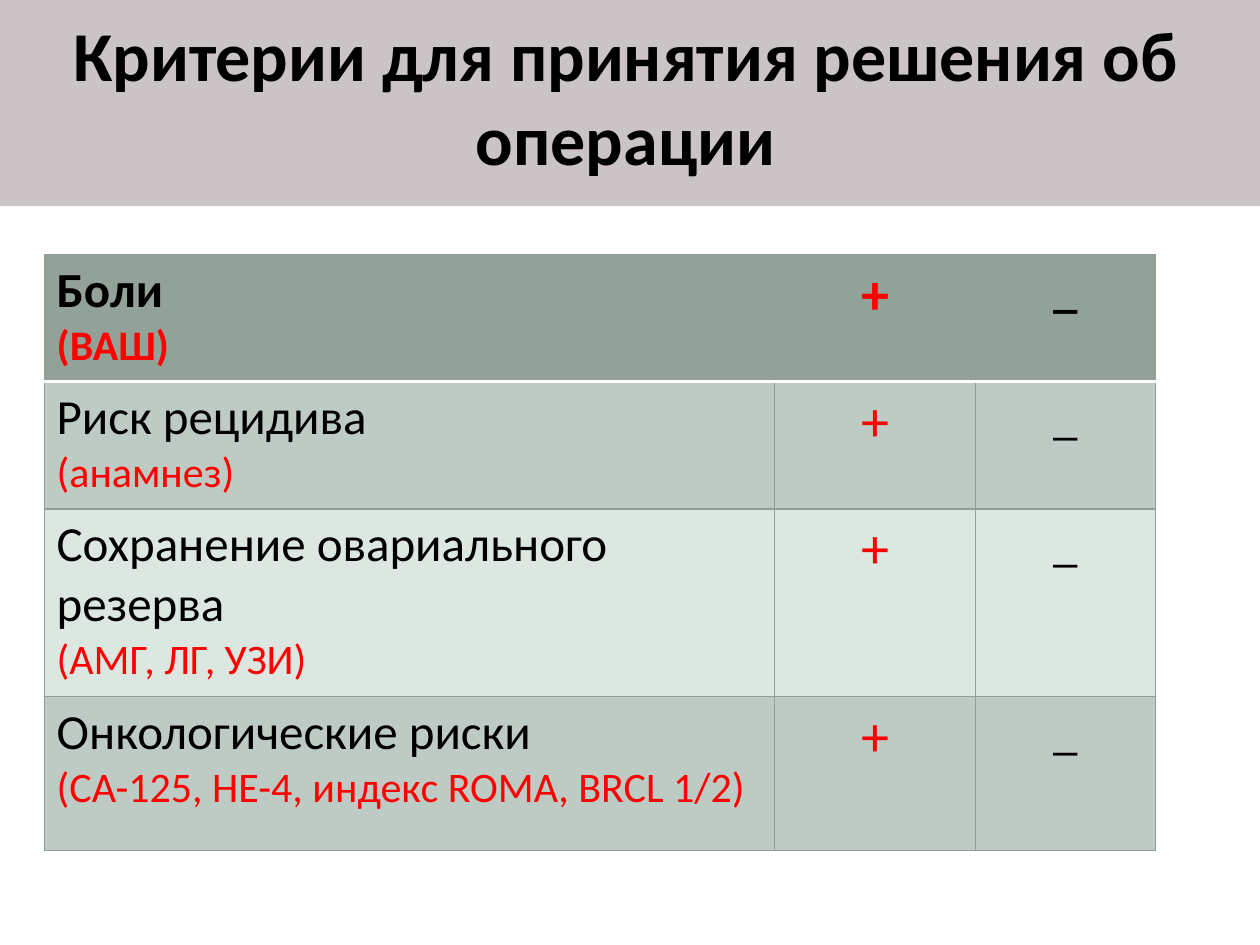
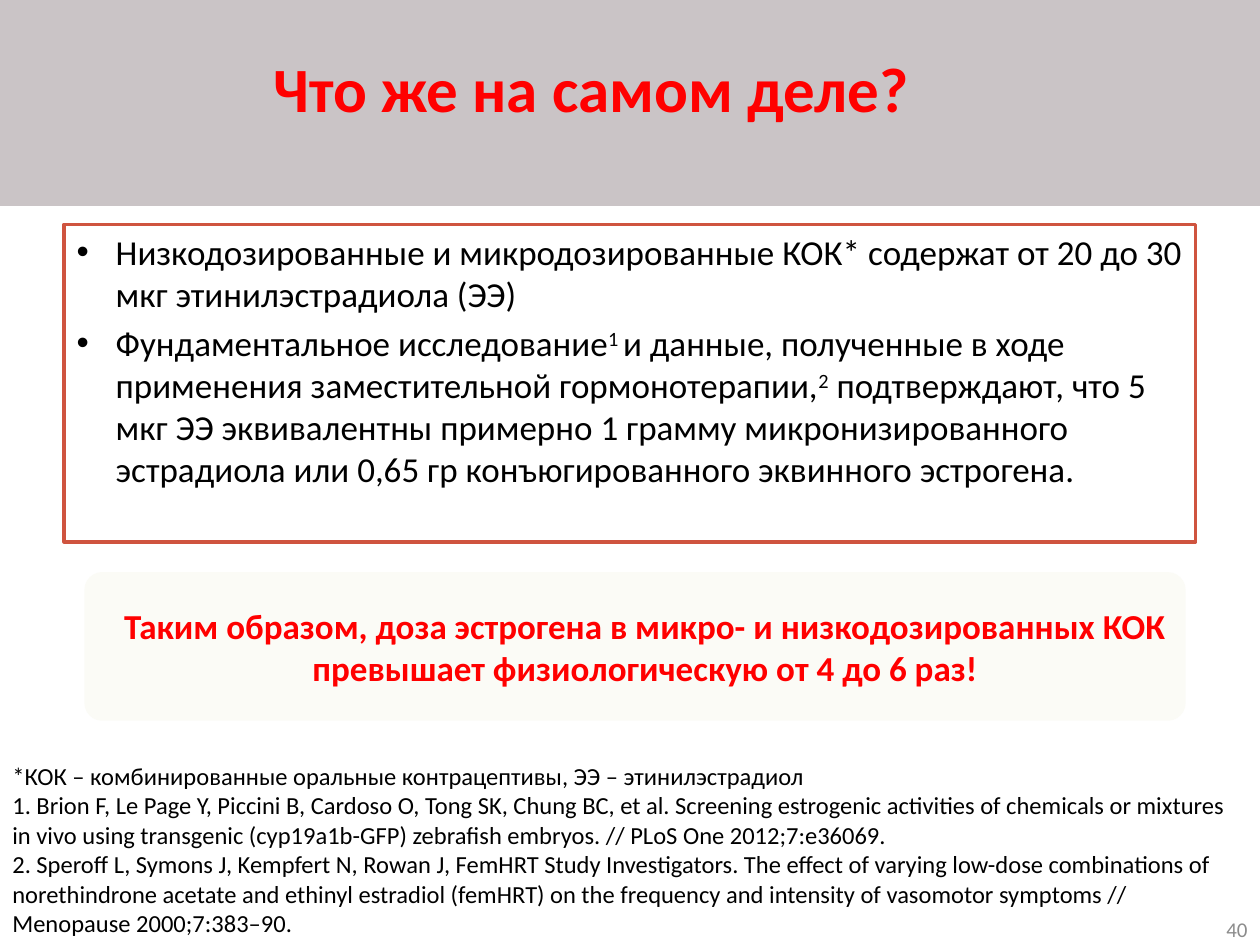
"""Build two slides on surgery criteria and on oestrogen doses in contraceptives."""
from dataclasses import dataclass

from lxml.etree import SubElement
from pptx import Presentation
from pptx.dml.color import RGBColor
from pptx.enum.shapes import MSO_SHAPE as Shape
from pptx.enum.text import MSO_ANCHOR as Anchor, PP_ALIGN as Align
from pptx.oxml.ns import qn
from pptx.util import Inches, Pt

CRITERIA_TITLE = "Критерии для принятия решения об операции"
CRITERIA = [
    ("Боли", "(ВАШ)"),
    ("Риск рецидива", "(анамнез)"),
    ("Сохранение овариального резерва", "(АМГ, ЛГ, УЗИ)"),
    ("Онкологические риски", "(СА-125, HE-4, индекс ROMA, BRCL 1/2)"),
]
MARKS = ("+", "_")

DOSE_TITLE = "Что же на самом деле?"
SUPERSCRIPTS = ("1 ", "2")
FACTS = [
    ["Низкодозированные и микродозированные КОК* содержат от 20 до 30 мкг этинилэстрадиола (ЭЭ)"],
    ["Фундаментальное исследование", "1 ",
     "и данные, полученные в ходе применения заместительной гормонотерапии,", "2",
     " подтверждают, что 5 мкг ЭЭ эквивалентны примерно 1 грамму микронизированного "
     "эстрадиола или 0,65 гр конъюгированного эквинного эстрогена."],
]
CONCLUSION = ("Таким образом, доза эстрогена в микро- и низкодозированных КОК "
              "превышает физиологическую от 4 до 6 раз!")
REFERENCES = [
    "*КОК – комбинированные оральные контрацептивы, ЭЭ – этинилэстрадиол",
    "1. Brion F, Le Page Y, Piccini B, Cardoso O, Tong SK, Chung BC, et al. Screening "
    "estrogenic activities of chemicals or mixtures in vivo using transgenic "
    "(cyp19a1b-GFP) zebrafish embryos. // PLoS One 2012;7:e36069.",
    "2. Speroff L, Symons J, Kempfert N, Rowan J, FemHRT Study Investigators. The effect "
    "of varying low-dose combinations of norethindrone acetate and ethinyl estradiol "
    "(femHRT) on the frequency and intensity of vasomotor symptoms // Menopause "
    "2000;7:383–90.",
]
PAGE_NUMBER = "40"

WIDTH, HEIGHT = 10, 7.5
BAND_HEIGHT = 1.62
TABLE_AT = (0.35, 2.02)
COLUMNS = (5.8, 1.59, 1.43)
ROWS = (1.01, 1.01, 1.49, 1.22)


@dataclass(frozen=True)
class Theme:
    font: str = "Calibri"
    ink: str = "000000"
    accent: str = "FF0000"
    paper: str = "FFFFFF"
    band: str = "CAC4C6"
    header: str = "93A299"
    stripes: tuple = ("DBE7E0", "BECBC4")
    grid: str = "8F9F96"
    frame: str = "CF543F"
    panel: str = "FBFBF6"
    muted: str = "8C8C8C"
    title: int = 40
    question: int = 36
    plus: int = 32
    criterion: int = 28
    detail: int = 24
    body: int = 20
    reference: int = 14
    number: int = 12
    rule: float = 0.75
    heavy: float = 2


THEME = Theme()


def color(code):
    return RGBColor.from_string(code)


def style(para, size, code=THEME.ink, bold=False, align=Align.LEFT):
    para.alignment = align
    font = para.font
    font.name, font.size, font.bold = THEME.font, Pt(size), bold
    font.color.rgb = color(code)


def paragraphs(frame, count):
    return [frame.paragraphs[0]] + [frame.add_paragraph() for _ in range(count - 1)]


def add_panel(page, kind, place, fill, line=None):
    panel = page.shapes.add_shape(kind, *map(Inches, place))
    panel.shadow.inherit = False
    panel.fill.solid()
    panel.fill.fore_color.rgb = color(fill)
    if line:
        panel.line.color.rgb = color(line)
        panel.line.width = Pt(THEME.heavy)
    else:
        panel.line.fill.background()
    return panel


def add_text(page, place, lines, size, anchor=Anchor.TOP, **look):
    frame = page.shapes.add_textbox(*map(Inches, place)).text_frame
    frame.word_wrap = True
    frame.vertical_anchor = anchor
    for para, line in zip(paragraphs(frame, len(lines)), lines):
        para.add_run().text = line
        style(para, size, **look)


def add_page(deck, title, place, size, code):
    page = deck.slides.add_slide(deck.slide_layouts[6])
    add_panel(page, Shape.RECTANGLE, (0, 0, WIDTH, BAND_HEIGHT), THEME.band, THEME.band)
    add_text(page, place, [title], size, Anchor.MIDDLE, code=code, bold=True,
             align=Align.CENTER)
    return page


def set_borders(cell, **sides):
    properties = cell._tc.get_or_add_tcPr()
    for position, side in enumerate(("L", "R", "T", "B")):
        code, width = sides.get(side, (THEME.grid, THEME.rule))
        line = properties.makeelement(qn(f"a:ln{side}"), {"w": str(Pt(width))})
        properties.insert(position, line)
        SubElement(SubElement(line, qn("a:solidFill")), qn("a:srgbClr"), val=code)


def add_criteria_table(page):
    size = (sum(COLUMNS), sum(ROWS))
    table = page.shapes.add_table(len(ROWS), len(COLUMNS),
                                  *map(Inches, TABLE_AT + size)).table
    for column, width in zip(table.columns, COLUMNS):
        column.width = Inches(width)
    divider = (THEME.paper, THEME.heavy)
    for index, (criterion, detail) in enumerate(CRITERIA):
        table.rows[index].height = Inches(ROWS[index])
        bold = index == 0
        fill = THEME.stripes[index % 2] if index else THEME.header
        sides = {0: {"B": divider}, 1: {"T": divider}}.get(index, {})
        name, plus, minus = (
            [(criterion, THEME.criterion, THEME.ink), (detail, THEME.detail, THEME.accent)],
            [(MARKS[0], THEME.plus, THEME.accent)],
            [(MARKS[1], THEME.criterion, THEME.ink)],
        )
        for column, lines in enumerate((name, plus, minus)):
            cell = table.cell(index, column)
            cell.fill.solid()
            cell.fill.fore_color.rgb = color(fill)
            set_borders(cell, **sides)
            align = Align.CENTER if column else Align.LEFT
            for para, (text, points, code) in zip(
                    paragraphs(cell.text_frame, len(lines)), lines):
                para.add_run().text = text
                style(para, points, code, bold, align)


def add_facts(page):
    box = add_panel(page, Shape.RECTANGLE, (0.51, 1.78, 8.98, 2.52), THEME.paper, THEME.frame)
    frame = box.text_frame
    frame.word_wrap = True
    frame.vertical_anchor = Anchor.TOP
    for index, (para, spans) in enumerate(zip(paragraphs(frame, len(FACTS)), FACTS)):
        if index:
            para.space_before = Pt(THEME.body * 0.2)
        properties = para._p.get_or_add_pPr()
        properties.set("marL", str(Inches(0.31)))
        properties.set("indent", str(Inches(-0.31)))
        SubElement(properties, qn("a:buFont"), typeface="Arial")
        SubElement(properties, qn("a:buChar"), char="•")
        style(para, THEME.body)
        for text in spans:
            span = para.add_run()
            span.text = text
            if text in SUPERSCRIPTS:
                span.font._element.set("baseline", "30000")


def add_conclusion(page):
    panel = add_panel(page, Shape.ROUNDED_RECTANGLE, (0.67, 4.54, 8.74, 1.18), THEME.panel)
    panel.adjustments[0] = 0.12
    add_text(page, (0.83, 4.75, 8.58, 0.77), [CONCLUSION], THEME.body,
             code=THEME.accent, bold=True, align=Align.CENTER)


def main():
    deck = Presentation()
    deck.slide_width, deck.slide_height = Inches(WIDTH), Inches(HEIGHT)

    criteria = add_page(deck, CRITERIA_TITLE, (0.2, 0.13, 9.53, 1.25), THEME.title, THEME.ink)
    add_criteria_table(criteria)

    doses = add_page(deck, DOSE_TITLE, (0.83, 0.44, 7.72, 0.5), THEME.question, THEME.accent)
    add_facts(doses)
    add_text(doses, (7.92, 7.25, 2.08, 0.25), [PAGE_NUMBER], THEME.number, Anchor.MIDDLE,
             code=THEME.muted, align=Align.RIGHT)
    add_text(doses, (0, 5.99, WIDTH, 1.51), REFERENCES, THEME.reference)
    add_conclusion(doses)

    deck.save("out.pptx")


if __name__ == "__main__":
    main()
